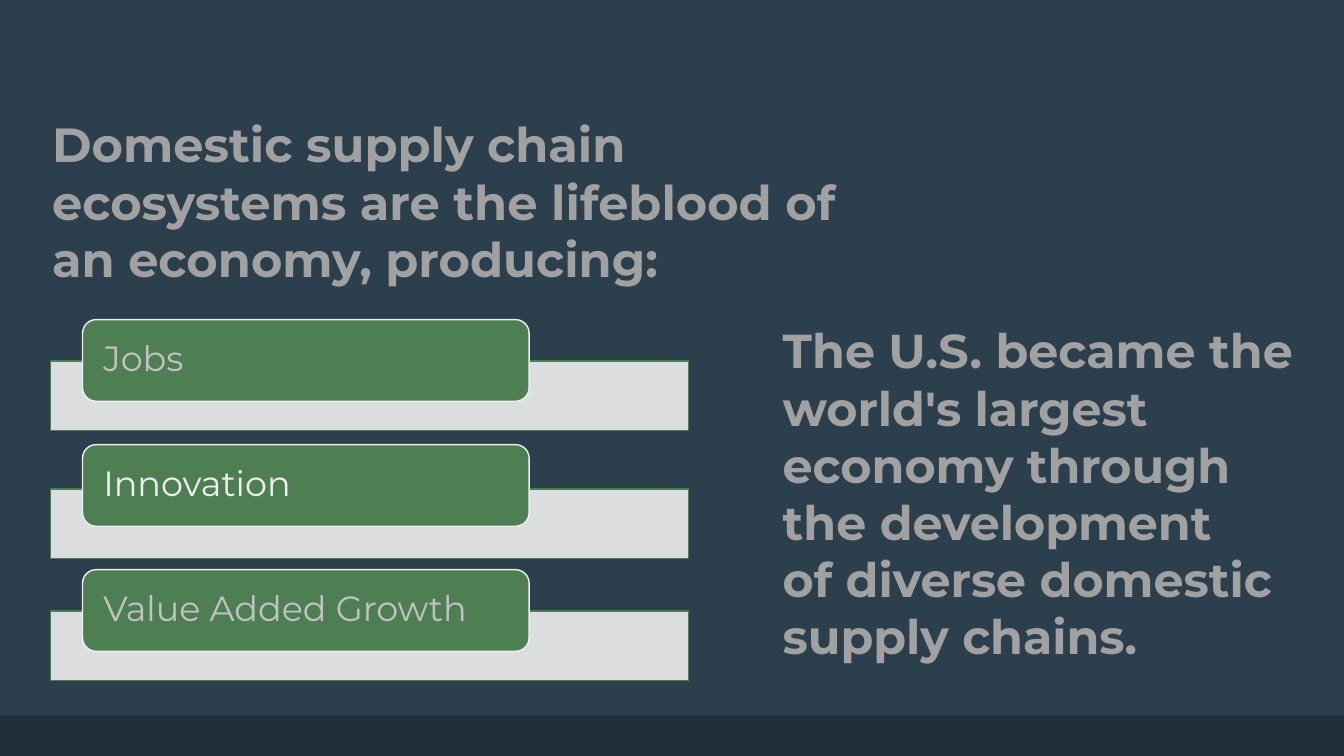
from lxml import etree
from pptx import Presentation
from pptx.dml.color import RGBColor
from pptx.enum import shapes, text
from pptx.oxml import ns
from pptx.util import Pt

# Content
TITLE = "Domestic supply chain ecosystems are the lifeblood of an economy, producing:"
STATEMENT = [
    "The U.S. became the world's largest economy through the development",
    "of diverse domestic supply chains.",
]
# Label, text colour, top of the pale bar
BENEFITS = [
    ("Jobs", "C2C2C2", 257.8),
    ("Innovation", "EFEFEF", 349.2),
    ("Value Added Growth", "C2C2C2", 436.3),
]

# Style and layout, in points
FONT = "Montserrat"
NAVY, DARK, GREEN, PALE, GREY = "2C3F4D", "212F3A", "4E7F53", "EFEFEF", "A1A1A1"
WIDTH, HEIGHT, STRIP_HEIGHT = 960, 540, 28.8
BAR_LEFT, BAR_WIDTH, BAR_HEIGHT = 36, 456, 49.7
TAB_LEFT, TAB_TOP, TAB_WIDTH, TAB_HEIGHT, TAB_STEP = 59, 228.3, 319, 58.3, 89.3


def color(value):
    return RGBColor.from_string(value)


def add_block(slide, kind, left, top, width, height, fill, line=None):
    shape = slide.shapes.add_shape(kind, Pt(left), Pt(top), Pt(width), Pt(height))
    shape.shadow.inherit = False
    shape.fill.solid()
    shape.fill.fore_color.rgb = color(fill)
    if line:
        shape.line.color.rgb = color(line)
        shape.line.width = Pt(1)
    else:
        shape.line.fill.background()
    return shape


def set_opacity(shape, percent):
    fill = shape.fill.fore_color._xFill.find(ns.qn("a:srgbClr"))
    etree.SubElement(fill, ns.qn("a:alpha"), val=str(percent * 1000))


def write(shape, lines, size, ink, bold=False, anchor=text.MSO_ANCHOR.TOP):
    frame = shape.text_frame
    frame.text = "\n".join(lines)
    frame.word_wrap = True
    frame.auto_size = text.MSO_AUTO_SIZE.NONE
    frame.vertical_anchor = anchor
    for paragraph in frame.paragraphs:
        paragraph.alignment = text.PP_ALIGN.LEFT
        for run in paragraph.runs:
            run.font.name = FONT
            run.font.size = Pt(size)
            run.font.bold = bold
            run.font.color.rgb = color(ink)
    return frame


def main():
    presentation = Presentation()
    presentation.slide_width, presentation.slide_height = Pt(WIDTH), Pt(HEIGHT)
    slide = presentation.slides.add_slide(presentation.slide_layouts[5])

    # Background and bottom strip
    slide.background.fill.solid()
    slide.background.fill.fore_color.rgb = color(NAVY)
    add_block(slide, shapes.MSO_SHAPE.RECTANGLE,
              0, HEIGHT - STRIP_HEIGHT, WIDTH, STRIP_HEIGHT, DARK)

    # Title
    title = slide.shapes.title
    title.left, title.top, title.width, title.height = Pt(30), Pt(78.4), Pt(600), Pt(132)
    write(title, [TITLE], 34.2, GREY, bold=True)

    # Benefits: a pale bar with a green tab on it
    for index, (label, ink, bar_top) in enumerate(BENEFITS):
        bar = add_block(slide, shapes.MSO_SHAPE.RECTANGLE,
                        BAR_LEFT, bar_top, BAR_WIDTH, BAR_HEIGHT, PALE, GREEN)
        set_opacity(bar, 90)
        tab = add_block(slide, shapes.MSO_SHAPE.ROUNDED_RECTANGLE, TAB_LEFT,
                        TAB_TOP + index * TAB_STEP, TAB_WIDTH, TAB_HEIGHT, GREEN, PALE)
        frame = write(tab, [label], 25, ink, anchor=text.MSO_ANCHOR.MIDDLE)
        frame.margin_left = frame.margin_right = Pt(12)
        frame.margin_top = frame.margin_bottom = 0
        frame.paragraphs[0].line_spacing = 0.9

    # Statement on the right
    statement = slide.shapes.add_textbox(Pt(552), Pt(226), Pt(384), Pt(260))
    write(statement, STATEMENT, 34, GREY, bold=True)

    presentation.save("out.pptx")


if __name__ == "__main__":
    main()
